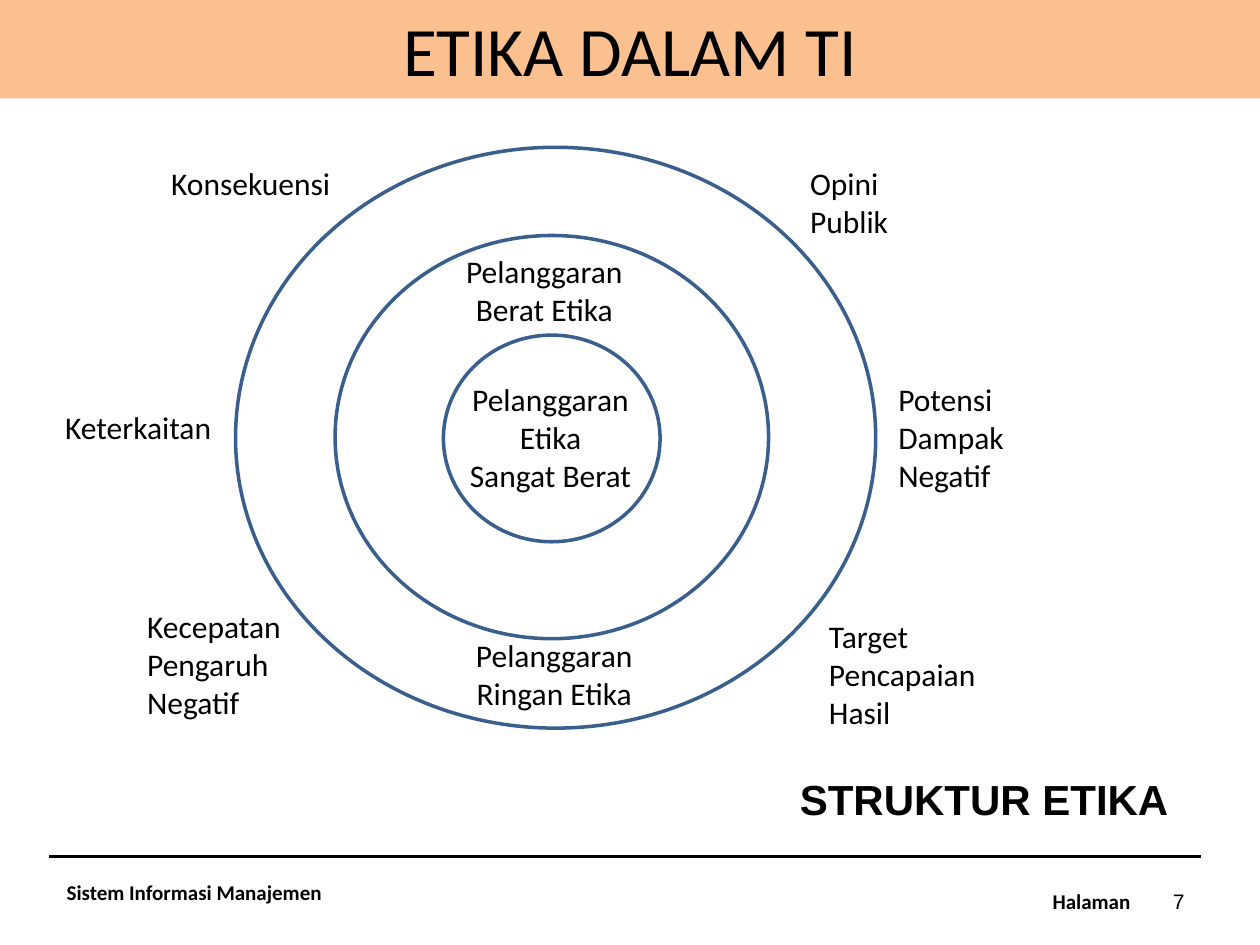
from dataclasses import dataclass

from lxml import etree
from pptx import Presentation
from pptx.dml.color import RGBColor
from pptx.enum.shapes import MSO_CONNECTOR as Conn, MSO_SHAPE as Kind
from pptx.enum.text import MSO_ANCHOR as Anchor, PP_ALIGN as Align
from pptx.oxml.ns import qn
from pptx.slide import Slide
from pptx.text.text import TextFrame
from pptx.util import Pt

BLACK = RGBColor(0x00, 0x00, 0x00)
PEACH = RGBColor(0xFA, 0xC0, 0x90)
BLUE = RGBColor(0x3A, 0x5F, 0x8C)


@dataclass
class Ring:
    left: float
    top: float
    width: float
    height: float


@dataclass
class Label:
    text: str
    left: float
    top: float
    width: float
    align: Align = Align.LEFT
    size: float = 18
    font: str = "Calibri"
    bold: bool = False
    height: float = 0  # 0: follows the number of lines
    anchor: Anchor = Anchor.TOP
    wrap: bool = False


RINGS = [
    Ring(253.4, 191.5, 123.8, 118.1),
    Ring(191.5, 134.6, 247.7, 230.4),
    Ring(134.6, 84.2, 365.8, 331.9),
]

LABELS = [
    # Inside the rings
    Label("Pelanggaran\nEtika\nSangat Berat", 260.6, 213.8, 108, Align.CENTER),
    Label("Pelanggaran\nBerat Etika", 258.5, 140.4, 105.1, Align.CENTER),
    Label("Pelanggaran\nRingan Etika", 264.2, 360, 105.1, Align.CENTER),
    # Around the rings
    Label("Opini\nPublik", 455.8, 90, 59.8),
    Label("Potensi\nDampak\nNegatif", 506.2, 213.8, 75.6),
    Label("Target\nPencapaian\nHasil", 466.6, 349.2, 99.4),
    Label("Kecepatan\nPengaruh\nNegatif", 77, 343.4, 92.2),
    Label("Keterkaitan", 30.2, 229.7, 98.6),
    Label("Konsekuensi", 90.7, 90, 106.6),
    # Caption
    Label("STRUKTUR ETIKA", 450, 438.5, 227.5, size=24, font="Arial", bold=True),
    # Footer
    Label("Sistem Informasi Manajemen", 31, 495.4, 182.9, size=12, bold=True,
          height=28.8, anchor=Anchor.MIDDLE, wrap=True),
    Label("Halaman", 585.4, 500.4, 67.7, Align.RIGHT, 12, bold=True,
          height=28.8, anchor=Anchor.MIDDLE, wrap=True),
    Label("7", 652.3, 500.4, 31.7, Align.RIGHT, 12, "Arial",
          height=28.8, anchor=Anchor.MIDDLE, wrap=True),
]


def write(frame: TextFrame, text: str, align: Align, size: float,
          face: str, bold: bool = False) -> None:
    frame.text = text
    for para in frame.paragraphs:
        para.alignment = align
        font = para.font
        font.name, font.size, font.bold = face, Pt(size), bold
        font.color.rgb = BLACK


def draw_title(slide: Slide, text: str) -> None:
    bar = slide.shapes.add_shape(Kind.RECTANGLE, 0, 0, Pt(720), Pt(56.2))
    bar.shadow.inherit = False
    bar.fill.solid()
    bar.fill.fore_color.rgb = PEACH
    bar.line.fill.background()
    bar.text_frame.vertical_anchor = Anchor.MIDDLE
    write(bar.text_frame, text, Align.CENTER, 39.6, "Calibri")


def draw_rule(slide: Slide) -> None:
    rule = slide.shapes.add_connector(
        Conn.STRAIGHT, Pt(28.1), Pt(489.6), Pt(686.2), Pt(489.6))
    rule.line.color.rgb = BLACK
    rule.line.width = Pt(1.5)
    etree.SubElement(rule.element.spPr, qn("a:effectLst"))


def draw_ring(slide: Slide, ring: Ring) -> None:
    oval = slide.shapes.add_shape(Kind.OVAL, Pt(ring.left), Pt(ring.top),
                                  Pt(ring.width), Pt(ring.height))
    oval.shadow.inherit = False
    oval.fill.background()
    oval.line.color.rgb = BLUE
    oval.line.width = Pt(2)


def draw_label(slide: Slide, label: Label) -> None:
    lines = label.text.count("\n") + 1
    height = label.height or 7.2 + lines * label.size * 1.21
    box = slide.shapes.add_textbox(Pt(label.left), Pt(label.top),
                                   Pt(label.width), Pt(height))
    frame = box.text_frame
    frame.word_wrap = label.wrap
    frame.vertical_anchor = label.anchor
    write(frame, label.text, label.align, label.size, label.font, label.bold)


def main() -> None:
    deck = Presentation()
    deck.slide_width, deck.slide_height = Pt(720), Pt(540)
    slide = deck.slides.add_slide(deck.slide_layouts[6])
    draw_rule(slide)
    draw_title(slide, "ETIKA DALAM TI")
    for ring in RINGS:
        draw_ring(slide, ring)
    for label in LABELS:
        draw_label(slide, label)
    deck.save("out.pptx")


if __name__ == "__main__":
    main()
